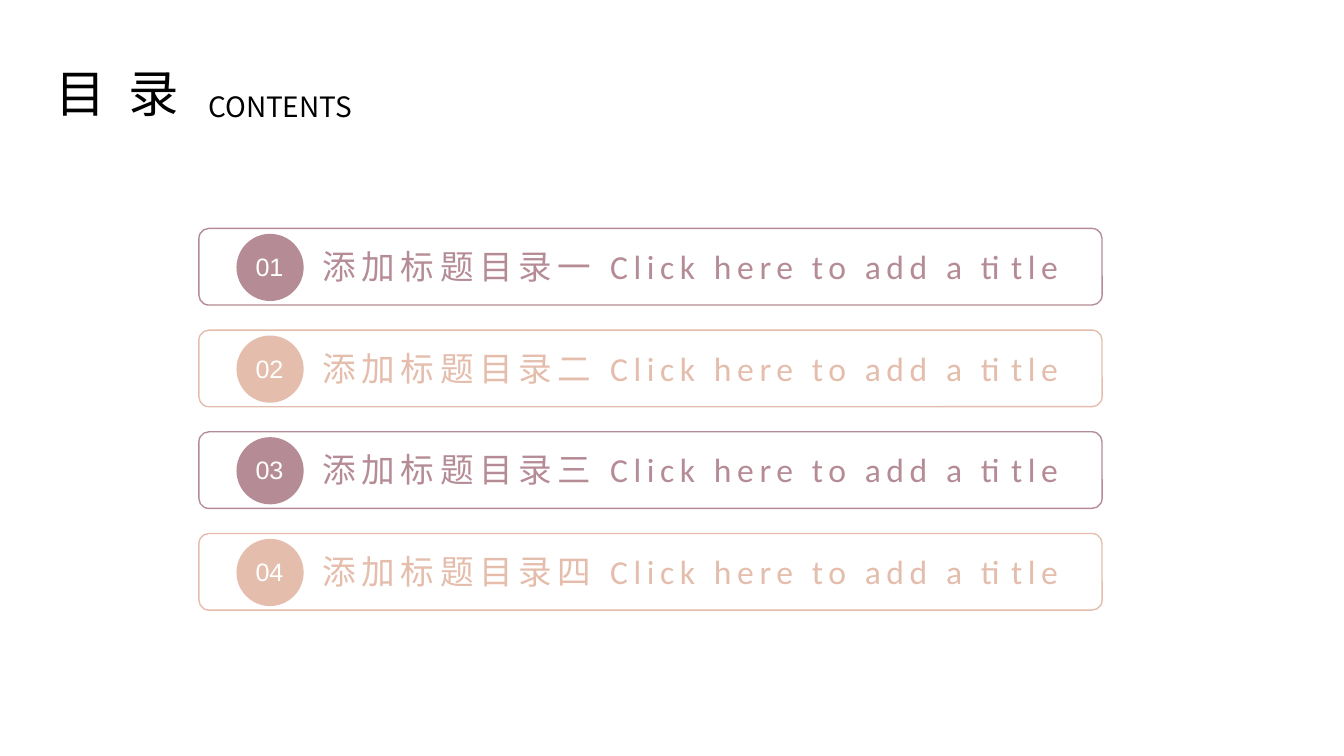
import pptx
import pptx.dml.color
import pptx.enum.shapes
import pptx.enum.text
import pptx.oxml.ns
import pptx.util
from pptx.util import Inches

RGBColor = pptx.dml.color.RGBColor
MAUVE = RGBColor(0xB5, 0x8C, 0x95)
PEACH = RGBColor(0xE4, 0xBD, 0xAC)
BLACK = RGBColor(0, 0, 0)
WHITE = RGBColor(0xFF, 0xFF, 0xFF)

CJK_FONT = "Noto Sans CJK SC"
CENTER = pptx.enum.text.PP_ALIGN.CENTER
LEFT = pptx.enum.text.PP_ALIGN.LEFT
SHAPE_TYPE = pptx.enum.shapes.MSO_SHAPE


def add_text(shapes, box, runs, size, color, align=LEFT, inset=(0.09, 0.04)):
    """Add a text box; each run is (text, font name, letter spacing in points)."""
    textbox = shapes.add_textbox(*[Inches(length) for length in box])
    frame = textbox.text_frame
    frame.word_wrap = True
    frame.auto_size = pptx.enum.text.MSO_AUTO_SIZE.SHAPE_TO_FIT_TEXT
    frame.margin_left = frame.margin_right = Inches(inset[0])
    frame.margin_top = frame.margin_bottom = Inches(inset[1])
    paragraph = frame.paragraphs[0]
    paragraph.alignment = align
    for text, font_name, spacing in runs:
        run = paragraph.add_run()
        run.text = text
        run.font.size = pptx.util.Pt(size)
        run.font.name = font_name
        run.font.color.rgb = color
        properties = run.font._element
        properties.set("spc", str(spacing * 100))
        east_asian = properties.makeelement(pptx.oxml.ns.qn("a:ea"), {"typeface": font_name})
        properties.find(pptx.oxml.ns.qn("a:latin")).addnext(east_asian)


presentation = pptx.Presentation()
presentation.slide_width = Inches(10)
presentation.slide_height = Inches(10 * 9 / 16)
slide = presentation.slides.add_slide(presentation.slide_layouts[6])

# Heading
add_text(slide.shapes, (1.46, 0.63, 1.58, 0.34), [("CONTENTS", CJK_FONT, 0)], 15, BLACK)
add_text(slide.shapes, (0, 0.42, 1.75, 0.54),
         [("目 ", CJK_FONT, 3), ("录", CJK_FONT, 0)], 27, BLACK, CENTER)

# Contents entries
FIRST_TOP, LAST_TOP = 1.7, 3.97
entries = ["添加标题目录一 ", "添加标题目录二 ", "添加标题目录三 ", "添加标题目录四 "]
pitch = (LAST_TOP - FIRST_TOP) / (len(entries) - 1)

for index, title in enumerate(entries):
    top = FIRST_TOP + index * pitch
    color = (MAUVE, PEACH)[index % 2]

    frame_shape = slide.shapes.add_shape(
        SHAPE_TYPE.ROUNDED_RECTANGLE, Inches(1.48), Inches(top), Inches(6.72), Inches(0.57))
    frame_shape.adjustments[0] = 0.13
    frame_shape.shadow.inherit = False
    frame_shape.fill.background()
    frame_shape.line.color.rgb = color
    frame_shape.line.width = pptx.util.Pt(0.75)

    add_text(slide.shapes, (2.31, top + 0.09, 5.89, 0.39),
             [(title, CJK_FONT, 3), ("Click here to add a title", "Calibri", 3)], 18, color)

    badge = slide.shapes.add_group_shape()
    circle = badge.shapes.add_shape(
        SHAPE_TYPE.FLOWCHART_CONNECTOR, Inches(1.76), Inches(top + 0.04), Inches(0.5), Inches(0.5))
    circle.shadow.inherit = False
    circle.fill.solid()
    circle.fill.fore_color.rgb = color
    circle.line.fill.background()
    add_text(badge.shapes, (1.73, top + 0.12, 0.55, 0.33),
             [(f"{index + 1:02}", "Arial", 0)], 13.5, WHITE, CENTER, (0.1, 0.05))

presentation.save("out.pptx")
